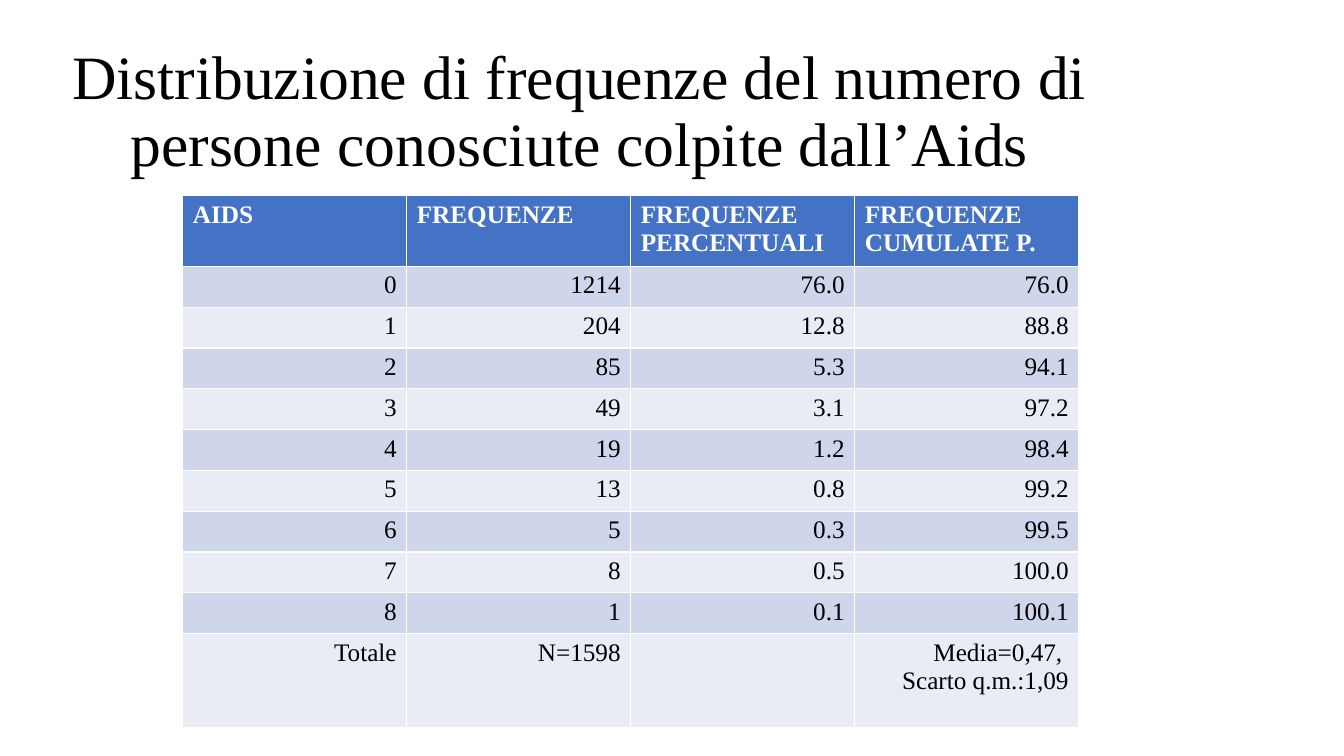
"""Build a slide with the frequency table of people known to be affected by Aids."""
from pptx import Presentation
from pptx.dml.color import RGBColor
from pptx.enum.text import MSO_ANCHOR, PP_ALIGN
from pptx.util import Inches, Pt


def color(hex_code):
    return RGBColor.from_string(hex_code)


def write(tf, text, size=18, fill="000000", bold=False, align=PP_ALIGN.RIGHT, spacing=1.0):
    tf.word_wrap = True
    for i, line in enumerate(text.split("\n")):
        p = tf.add_paragraph() if i else tf.paragraphs[0]
        p.alignment = align
        p.line_spacing = spacing
        r = p.add_run()
        r.text = line
        r.font.name = "Times New Roman"
        r.font.size = Pt(size)
        r.font.bold = bold
        r.font.color.rgb = color(fill)


prs = Presentation()
W = prs.slide_width = Inches(13.33)
H = prs.slide_height = Inches(7.5)
s = prs.slides.add_slide(prs.slide_layouts[6])

title = s.shapes.add_textbox(0, int(H * 0.053), int(W * 0.863), int(H * 0.193))
title.text_frame.vertical_anchor = MSO_ANCHOR.MIDDLE
write(title.text_frame,
      "Distribuzione di frequenze del numero di persone conosciute colpite dall’Aids",
      size=44, align=PP_ALIGN.CENTER, spacing=0.9)

rows = [
    ("AIDS", "FREQUENZE", "FREQUENZE PERCENTUALI", "FREQUENZE CUMULATE P."),
    ("0", "1214", "76.0", "76.0"),
    ("1", "204", "12.8", "88.8"),
    ("2", "85", "5.3", "94.1"),
    ("3", "49", "3.1", "97.2"),
    ("4", "19", "1.2", "98.4"),
    ("5", "13", "0.8", "99.2"),
    ("6", "5", "0.3", "99.5"),
    ("7", "8", "0.5", "100.0"),
    ("8", "1", "0.1", "100.1"),
    ("Totale", "N=1598", "", "Media=0,47, \nScarto q.m.:1,09"),
]
heights = [0.087] + [0.054] * 9 + [0.124]
table = s.shapes.add_table(len(rows), 4, int(W * 0.136), int(H * 0.259),
                           int(W * 4 / 6), int(H * sum(heights))).table
for column in table.columns:
    column.width = int(W / 6)

for i, values in enumerate(rows):
    table.rows[i].height = int(H * heights[i])
    header = i == 0
    band = "4472C4" if header else ("E9EBF5", "CFD5EA")[i % 2]
    for j, value in enumerate(values):
        cell = table.cell(i, j)
        cell.fill.solid()
        cell.fill.fore_color.rgb = color(band)
        if value:
            write(cell.text_frame, value, bold=header,
                  fill="FFFFFF" if header else "000000",
                  align=PP_ALIGN.LEFT if header else PP_ALIGN.RIGHT)

prs.save("out.pptx")
